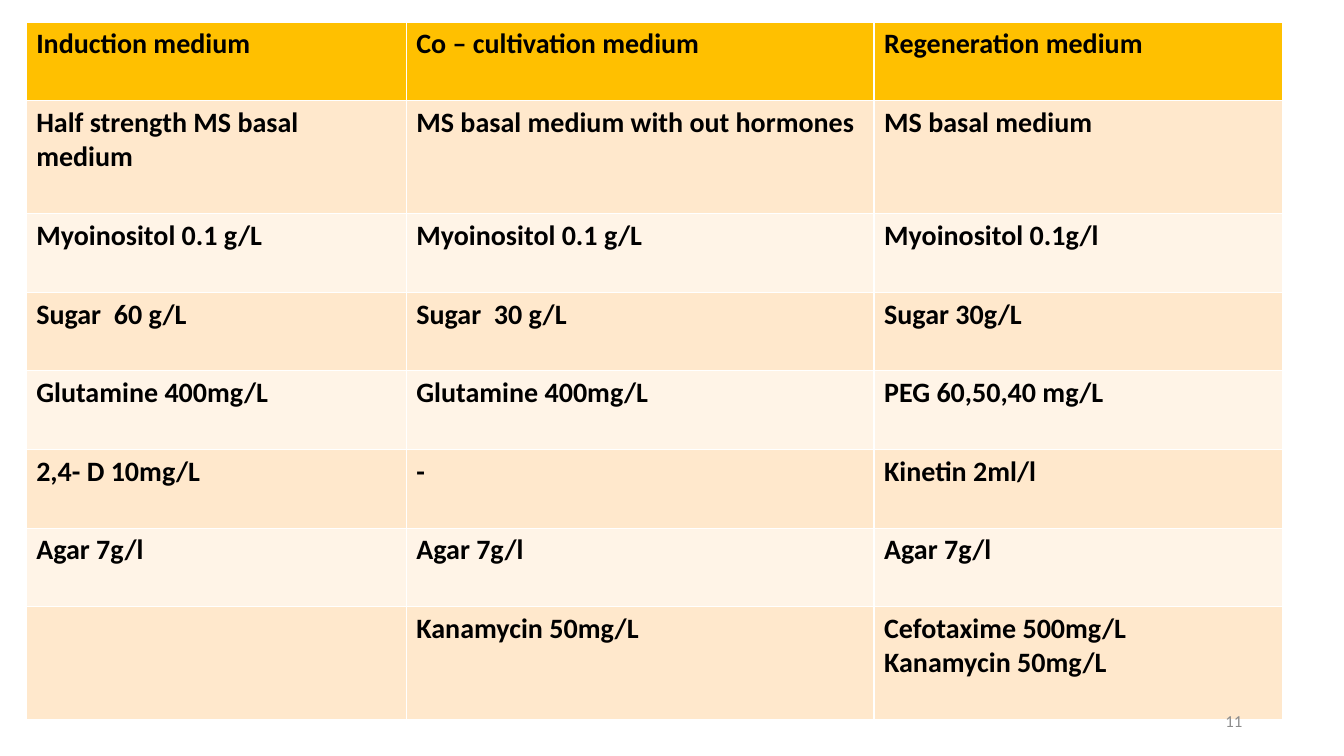
from dataclasses import dataclass

from lxml import etree
from pptx import Presentation
from pptx.dml.color import RGBColor
from pptx.enum.text import MSO_ANCHOR, PP_ALIGN
from pptx.oxml.ns import qn
from pptx.util import Inches, Pt

MIDDLE = MSO_ANCHOR.MIDDLE
LEFT, RIGHT = PP_ALIGN.LEFT, PP_ALIGN.RIGHT

COLUMN_WIDTHS = (3.77, 4.64, 4.05)
SHORT_ROW, TALL_ROW = 0.78, 1.12
TALL_ROWS = (1, 7)
MEDIA = (
    ("Induction medium", "Co – cultivation medium", "Regeneration medium"),
    ("Half strength MS basal medium", "MS basal medium with out hormones", "MS basal medium"),
    ("Myoinositol 0.1 g/L", "Myoinositol 0.1 g/L", "Myoinositol 0.1g/l"),
    ("Sugar  60 g/L", "Sugar  30 g/L", "Sugar 30g/L"),
    ("Glutamine 400mg/L", "Glutamine 400mg/L", "PEG 60,50,40 mg/L"),
    ("2,4- D 10mg/L", "-", "Kinetin 2ml/l"),
    ("Agar 7g/l", "Agar 7g/l", "Agar 7g/l"),
    ("", "Kanamycin 50mg/L", "Cefotaxime 500mg/L\nKanamycin 50mg/L"),
)


@dataclass(frozen=True)
class Theme:
    """Colours, font and type sizes of the slide."""

    font: str = "Calibri"
    text: str = "000000"
    muted: str = "8C8C8C"
    header: str = "FFC000"
    bands: tuple = ("FFF4E7", "FFE8CC")
    border: str = "FFFFFF"
    border_width: float = 1
    table_size: float = 20
    number_size: float = 12


class SlideBuilder:
    """Draws styled elements on one slide."""

    def __init__(self, slide, theme):
        """Keep the slide and its theme."""
        self.slide = slide
        self.theme = theme

    def style_text(self, frame, size, color, bold=False, alignment=LEFT):
        """Format every paragraph of a text frame."""
        for paragraph in frame.paragraphs:
            paragraph.alignment = alignment
            paragraph.font.name = self.theme.font
            paragraph.font.size = Pt(size)
            paragraph.font.bold = bold
            paragraph.font.color.rgb = RGBColor.from_string(color)

    def border_cell(self, cell):
        """Draw the four borders of a cell."""
        properties = cell._tc.get_or_add_tcPr()
        for position, side in enumerate(("lnL", "lnR", "lnT", "lnB")):
            line = etree.Element(qn(f"a:{side}"), w=str(Pt(self.theme.border_width)))
            fill = etree.SubElement(line, qn("a:solidFill"))
            etree.SubElement(fill, qn("a:srgbClr"), val=self.theme.border)
            properties.insert(position, line)

    def table(self, left, top, widths, heights, rows):
        """Add a banded table with a header row."""
        shape = self.slide.shapes.add_table(
            len(rows), len(widths), Inches(left), Inches(top),
            Inches(sum(widths)), Inches(sum(heights)))
        table = shape.table
        for column, width in zip(table.columns, widths):
            column.width = Inches(width)
        for index, (row, height, texts) in enumerate(zip(table.rows, heights, rows)):
            row.height = Inches(height)
            color = self.theme.bands[index % 2] if index else self.theme.header
            for cell, text in zip(row.cells, texts):
                cell.text = text
                cell.fill.solid()
                cell.fill.fore_color.rgb = RGBColor.from_string(color)
                self.border_cell(cell)
                self.style_text(cell.text_frame, self.theme.table_size, self.theme.text, bold=True)

    def page_number(self, left, top, width, height, number):
        """Add the page number."""
        shape = self.slide.shapes.add_textbox(
            Inches(left), Inches(top), Inches(width), Inches(height))
        frame = shape.text_frame
        frame.word_wrap = True
        frame.vertical_anchor = MIDDLE
        frame.text = str(number)
        self.style_text(frame, self.theme.number_size, self.theme.muted, alignment=RIGHT)


def main():
    """Build the slide of culture media and save it."""
    presentation = Presentation()
    presentation.slide_width = Inches(13.33)
    presentation.slide_height = Inches(7.5)
    slide = presentation.slides.add_slide(presentation.slide_layouts[6])
    builder = SlideBuilder(slide, Theme())
    heights = [TALL_ROW if index in TALL_ROWS else SHORT_ROW for index in range(len(MEDIA))]
    builder.table(0.26, 0.22, COLUMN_WIDTHS, heights, MEDIA)
    builder.page_number(9.42, 6.95, 3, 0.4, 11)
    presentation.save("out.pptx")


if __name__ == "__main__":
    main()
